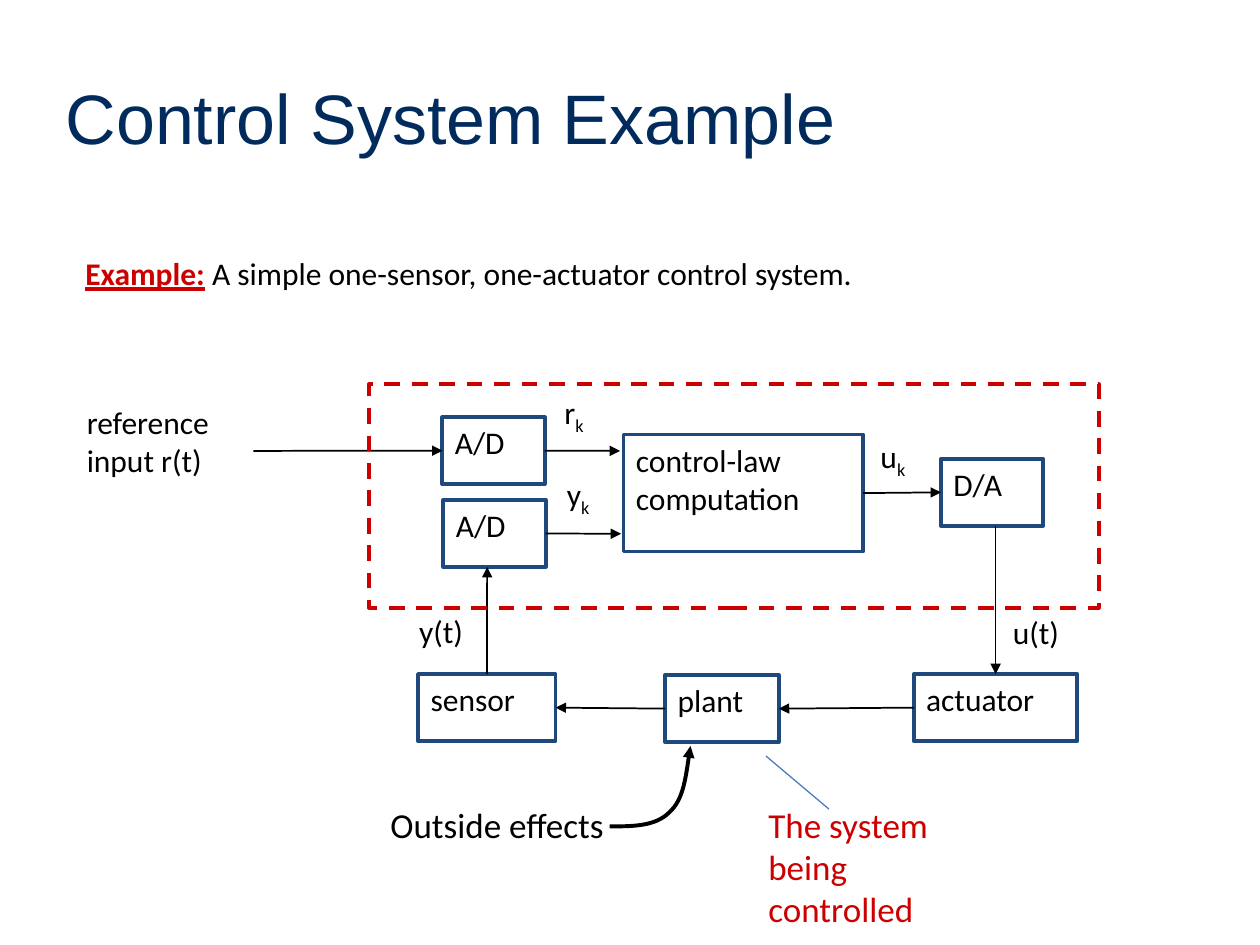
"""Build a slide with the block diagram of a one-sensor, one-actuator control system."""
from itertools import chain

from lxml import etree
from pptx import Presentation
from pptx import util as u
from pptx.dml.color import RGBColor
from pptx.enum import dml, shapes, text
from pptx.oxml import ns

NAVY = RGBColor(0x00, 0x2B, 0x5C)
BLUE = RGBColor(0x1F, 0x49, 0x7D)
LIGHT_BLUE = RGBColor(0x4B, 0x7E, 0xBC)
RED = RGBColor(0xCC, 0x00, 0x00)
BLACK = RGBColor(0x00, 0x00, 0x00)

TITLE = "Control System Example"
INTRO = ("Example:", " A simple one-sensor, one-actuator control system.")
BLOCK_H = 1.35
BLOCKS = {
    "control": ("control-law\ncomputation", 12.57, 8.76, 4.83, 2.36),
    "reference A/D": ("A/D", 8.92, 8.41, 2.06, BLOCK_H),
    "sensor A/D": ("A/D", 8.94, 10.08, 2.06, BLOCK_H),
    "D/A": ("D/A", 18.97, 9.25, 2.06, BLOCK_H),
    "sensor": ("sensor", 8.43, 13.59, 2.77, BLOCK_H),
    "plant": ("plant", 13.41, 13.61, 2.29, BLOCK_H),
    "actuator": ("actuator", 18.42, 13.59, 3.3, BLOCK_H),
}
TOP, LEFT, BOTTOM, RIGHT = range(4)
ARROWS = [
    (("reference A/D", RIGHT), (12.5, 9.09)),
    (("sensor A/D", RIGHT), (12.52, 10.76)),
    ((5.11, 9.09), ("reference A/D", LEFT)),
    (("control", RIGHT), ("D/A", LEFT)),
    (("sensor", TOP), (9.82, 11.43)),
    ((20.07, 10.6), ("actuator", TOP)),
    (("actuator", LEFT), ("plant", RIGHT)),
    (("plant", LEFT), ("sensor", RIGHT)),
]
LABELS = [
    ("r", "k", 11.13, 7.8, 1.07, 1.27, 18, BLACK),
    ("y", "k", 11.18, 9.45, 1.22, 1.27, 18, BLACK),
    ("y(t)", "", 8.2, 12.22, 1.73, 1.27, 18, BLACK),
    ("u(t)", "", 20.17, 12.24, 1.73, 1.27, 18, BLACK),
    ("u", "k", 17.5, 8.69, 1.22, 1.27, 18, BLACK),
    ("reference\ninput r(t)", "", 1.5, 8, 3.66, 2.29, 18, BLACK),
    ("The system\nbeing controlled", "", 15.24, 16.08, 5.05, 1.96, 20, RED),
    ("Outside effects", "", 7.62, 16.08, 5, 1.12, 20, BLACK),
]
COMPUTER = (7.44, 7.75, 14.71, 4.5)
CALLOUT = ((15.44, 15.24), (16.71, 16.31))
CURVE = [(12.29, 16.66), (12.75, 16.66), (13.21, 16.66), (13.49, 16.38),
         (13.77, 16.13), (13.84, 15.57), (13.92, 15.04)]


def cm(values):
    return [u.Cm(v) for v in values]


def write(tf, content, size=18, color=BLACK, font="Calibri", bold=False,
          underline=False, subscript=False):
    for i, line in enumerate(content.split("\n")):
        p = tf.add_paragraph() if i else tf.paragraphs[-1]
        p.alignment = text.PP_ALIGN.LEFT
        r = p.add_run()
        r.text = line
        r.font.size, r.font.name, r.font.color.rgb = u.Pt(size), font, color
        r.font.bold, r.font.underline = bold, underline
        if subscript:
            r.font._element.set("baseline", "-25000")


def add_textbox(slide, box):
    tf = slide.shapes.add_textbox(*cm(box)).text_frame
    tf.word_wrap = True
    return tf


def set_line(sp, color, width, arrow=False):
    sp.line.color.rgb, sp.line.width = color, u.Pt(width)
    if arrow:
        tail = etree.SubElement(sp.line._get_or_add_ln(), ns.qn("a:tailEnd"))
        tail.set("type", "triangle")


def add_rectangle(slide, box, color):
    sp = slide.shapes.add_shape(shapes.MSO_SHAPE.RECTANGLE, *cm(box))
    sp.shadow.inherit = False
    sp.fill.background()
    set_line(sp, color, 2.25)
    sp.text_frame.vertical_anchor = text.MSO_ANCHOR.TOP
    sp.text_frame.word_wrap = True
    return sp


def add_line(slide, start, end, blocks, color=BLACK, width=1, arrow=True):
    glued = [isinstance(point[0], str) for point in (start, end)]
    points = [(0, 0) if g else point for g, point in zip(glued, (start, end))]
    line = slide.shapes.add_connector(
        shapes.MSO_CONNECTOR.STRAIGHT, *cm(chain(*points)))
    if glued[0]:
        line.begin_connect(blocks[start[0]], start[1])
    if glued[1]:
        line.end_connect(blocks[end[0]], end[1])
    set_line(line, color, width, arrow)
    etree.SubElement(line._element.spPr, ns.qn("a:effectLst"))


def add_curve(slide, points):
    start, *rest = [cm(point) for point in points]
    builder = slide.shapes.build_freeform(*start)
    builder.add_line_segments(rest, close=False)
    sp = builder.convert_to_shape()
    segments = sp._element.xpath(".//a:lnTo")
    outline = segments[0].getparent()
    for i in range(0, len(segments), 3):
        bezier = etree.SubElement(outline, ns.qn("a:cubicBezTo"))
        for segment in segments[i:i + 3]:
            bezier.append(segment[0])
            outline.remove(segment)
    sp.shadow.inherit = False
    sp.fill.background()
    set_line(sp, BLACK, 2.25, arrow=True)


def main():
    prs = Presentation()
    prs.slide_width, prs.slide_height = u.Cm(25.4), u.Cm(19.05)
    slide = prs.slides.add_slide(prs.slide_layouts[5])

    title = slide.shapes.title
    title.left, title.top, title.width, title.height = cm((1.07, 1.07, 23.06, 2.54))
    title.text_frame.vertical_anchor = text.MSO_ANCHOR.MIDDLE
    write(title.text_frame, TITLE, size=40, color=NAVY, font="Arial")

    tf = add_textbox(slide, (1.47, 5, 16.61, 1.04))
    write(tf, INTRO[0], color=RED, bold=True, underline=True)
    write(tf, INTRO[1])

    blocks = {}
    for name, (caption, *box) in BLOCKS.items():
        blocks[name] = add_rectangle(slide, box, BLUE)
        write(blocks[name].text_frame, caption)

    for start, end in ARROWS:
        add_line(slide, start, end, blocks)

    for label, index, *box, size, color in LABELS:
        tf = add_textbox(slide, box)
        write(tf, label, size=size, color=color)
        if index:
            write(tf, index, size=size, color=color, subscript=True)

    computer = add_rectangle(slide, COMPUTER, RED)
    computer.line.dash_style = dml.MSO_LINE.DASH
    add_curve(slide, CURVE)
    add_line(slide, *CALLOUT, blocks, LIGHT_BLUE, 0.75, arrow=False)
    prs.save("out.pptx")


if __name__ == "__main__":
    main()
